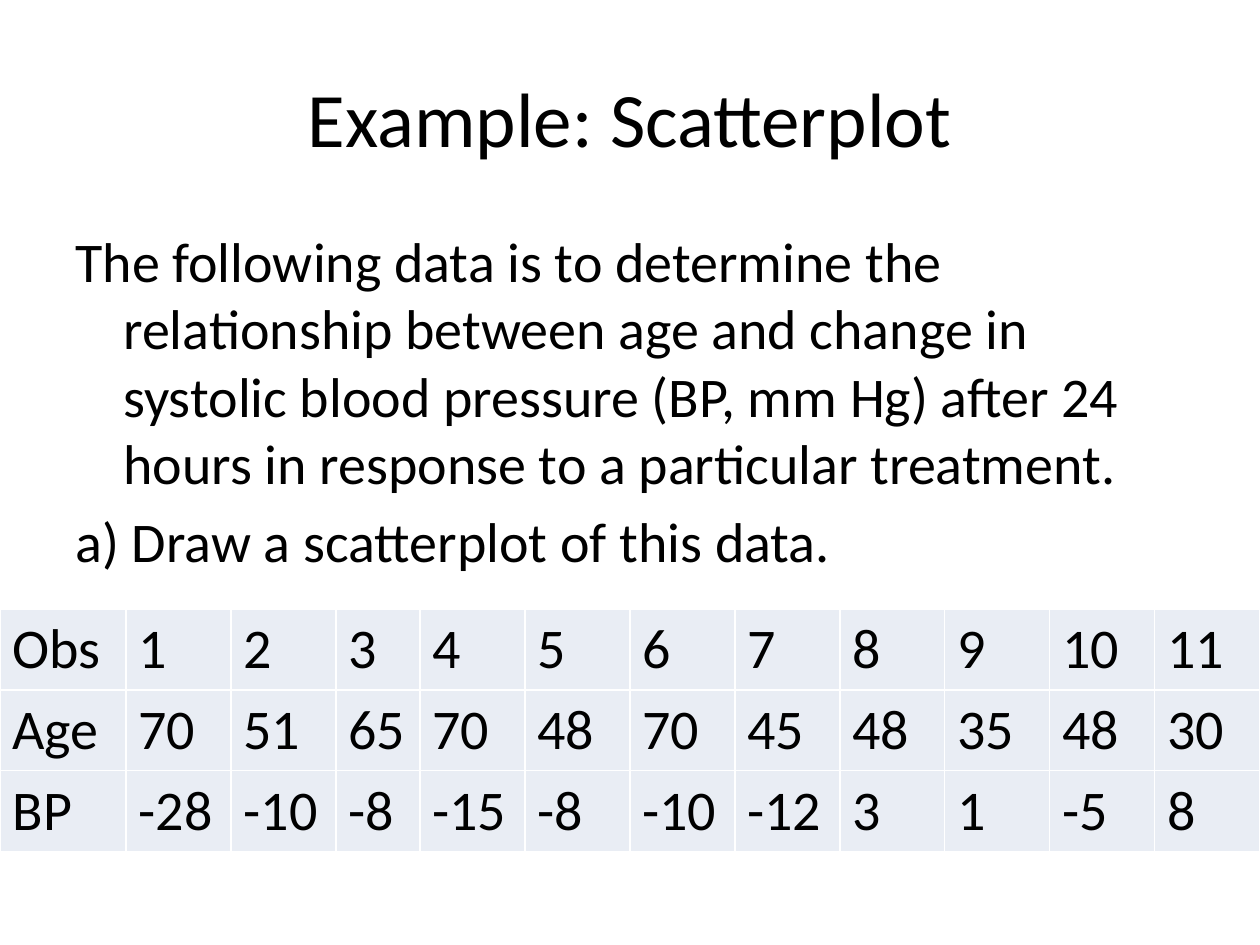
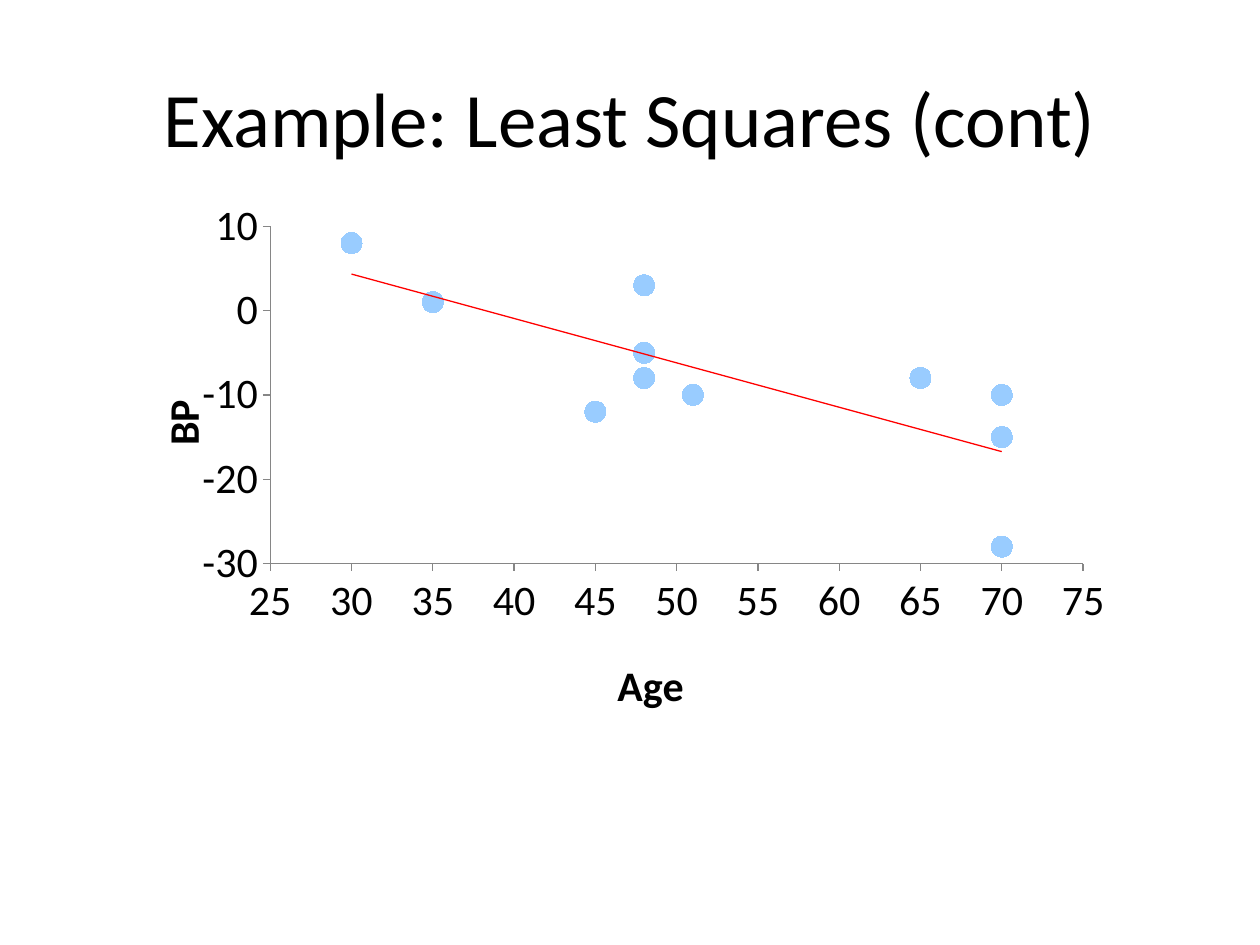
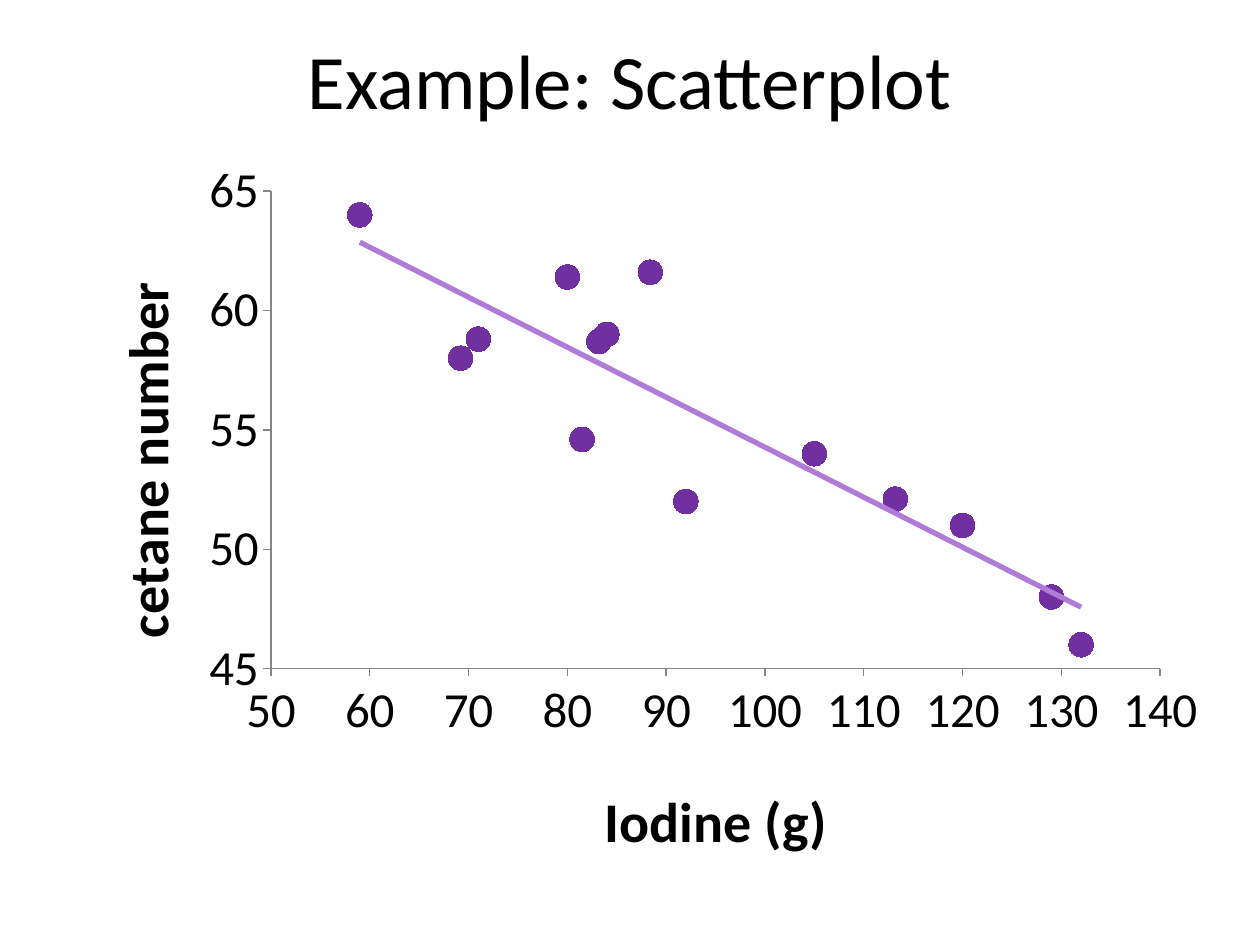
from lxml import etree
from pptx import Presentation
from pptx.chart.data import XyChartData
from pptx.dml.color import RGBColor
from pptx.enum.chart import XL_AXIS_CROSSES as Crosses
from pptx.enum.chart import XL_CHART_TYPE as ChartType
from pptx.enum.chart import XL_MARKER_STYLE as Marker
from pptx.enum.chart import XL_TICK_MARK as Tick
from pptx.enum.text import MSO_ANCHOR as Anchor
from pptx.enum.text import PP_ALIGN as Align
from pptx.oxml import parse_xml
from pptx.oxml.ns import nsdecls, qn
from pptx.util import Inches, Pt

WIDTH, HEIGHT = 10, 7.5
COLUMNS = 12
CELL = WIDTH / COLUMNS  # the grid is 12 columns by 9 rows of square cells
TITLE_ONLY = 5

FONT = "Calibri"
BLACK, WHITE = "000000", "FFFFFF"
TABLE_FILL, AXIS_GRAY = "E9EDF4", "868686"
SKY, RED = "99CCFF", "FF0000"
PURPLE, LILAC = "7030A0", "B07BD7"

AGE = [70, 51, 65, 70, 48, 70, 45, 48, 35, 48, 30]
BP = [-28, -10, -8, -15, -8, -10, -12, 3, 1, -5, 8]
IODINE = [132, 129, 120, 113.2, 105, 92, 84, 83.2, 88.4, 59, 80, 81.5, 71, 69.2]
CETANE = [46, 48, 51, 52.1, 54, 52, 59, 58.7, 61.6, 64, 61.4, 54.6, 58.8, 58]


def color(value):
    return RGBColor.from_string(value)


def grid(*cells):
    return [Inches(cell * CELL) for cell in cells]


def set_layout(element, index, shares, inner=False):
    """Place a chart part by x, y and, if given, w, h as shares of the chart."""
    for old in element.findall(qn("c:layout")):
        element.remove(old)
    target = '<c:layoutTarget val="inner"/>' if inner else ""
    modes = '<c:xMode val="edge"/><c:yMode val="edge"/>'
    sizes = "".join(f'<c:{name} val="{share}"/>' for name, share in zip("xywh", shares))
    element.insert(index, parse_xml(
        f'<c:layout {nsdecls("c")}><c:manualLayout>{target}{modes}{sizes}'
        "</c:manualLayout></c:layout>"))


class Deck:
    def __init__(self):
        self.deck = Presentation()
        self.deck.slide_width, self.deck.slide_height = Inches(WIDTH), Inches(HEIGHT)
        self.page = None

    def style(self, font, size, bold=False):
        font.name, font.size, font.bold = FONT, Pt(size), bold
        font.color.rgb = color(BLACK)

    def add_span(self, para, text, size, bold=False):
        span = para.add_run()
        span.text = text
        self.style(span.font, size, bold)

    def add_page(self, title, top=0.36):
        self.page = self.deck.slides.add_slide(self.deck.slide_layouts[TITLE_ONLY])
        box = self.page.shapes.title
        box.left, box.top, box.width, box.height = grid(0.6, top, 10.8, 1.5)
        box.text_frame.vertical_anchor = Anchor.MIDDLE
        para = box.text_frame.paragraphs[0]
        para.alignment = Align.CENTER
        self.add_span(para, title, 44)

    def add_body(self, at, texts, size=32):
        frame = self.page.shapes.add_textbox(*grid(*at)).text_frame
        frame.word_wrap = True
        for index, text in enumerate(texts):
            para = frame.add_paragraph() if index else frame.paragraphs[0]
            para.space_before = Pt(size * 0.2)
            hanging = Inches(0.38)
            properties = para._p.get_or_add_pPr()
            properties.set("marL", str(hanging))
            properties.set("indent", str(-hanging))
            self.add_span(para, text, size)

    def add_table(self, top, widths, row_height, rows):
        at = grid(0, top, COLUMNS, row_height * len(rows))
        table = self.page.shapes.add_table(len(rows), len(widths), *at).table
        table.first_row = table.horz_banding = False
        for column, width in zip(table.columns, grid(*widths)):
            column.width = width
        for row, values in zip(table.rows, rows):
            row.height = grid(row_height)[0]
            for cell, value in zip(row.cells, values):
                self.add_span(cell.text_frame.paragraphs[0], str(value), 32)
                self.add_borders(cell)
                cell.fill.solid()
                cell.fill.fore_color.rgb = color(TABLE_FILL)

    def add_borders(self, cell):
        properties = cell._tc.get_or_add_tcPr()
        for side in ("lnL", "lnR", "lnT", "lnB"):
            line = etree.SubElement(properties, qn(f"a:{side}"), w=str(Pt(1)))
            fill = etree.SubElement(line, qn("a:solidFill"))
            etree.SubElement(fill, qn("a:srgbClr"), val=WHITE)

    def add_scatter(self, at, xs, ys, plot, marker, trend):
        data = XyChartData()
        points = data.add_series("Series 1")
        for x, y in zip(xs, ys):
            points.add_data_point(x, y)
        chart = self.page.shapes.add_chart(ChartType.XY_SCATTER, *grid(*at), data).chart
        chart.has_title = chart.has_legend = False
        self.style(chart.font, 10)
        chart.plots[0].vary_by_categories = False
        set_layout(chart._chartSpace.chart.plotArea, 0, plot, inner=True)

        series = chart.plots[0].series[0]
        series.format.line.fill.background()
        size, fill = marker
        series.marker.style, series.marker.size = Marker.CIRCLE, size
        series.marker.format.fill.solid()
        series.marker.format.fill.fore_color.rgb = color(fill)
        series.marker.format.line.fill.background()
        self.add_trend(series, *trend)
        return chart

    def add_trend(self, series, stroke, width):
        series._element.find(qn("c:xVal")).addprevious(parse_xml(
            f'<c:trendline {nsdecls("c", "a")}><c:spPr><a:ln w="{Pt(width)}">'
            f'<a:solidFill><a:srgbClr val="{stroke}"/></a:solidFill></a:ln></c:spPr>'
            '<c:trendlineType val="linear"/><c:dispRSqr val="0"/><c:dispEq val="0"/>'
            "</c:trendline>"))

    def format_axis(self, axis, title, title_at, sizes, scale, upright=False):
        title_size, tick_size = sizes
        axis.minimum_scale, axis.maximum_scale, axis.major_unit = scale
        axis.has_major_gridlines = False
        axis.crosses = Crosses.MINIMUM
        axis.major_tick_mark, axis.minor_tick_mark = Tick.OUTSIDE, Tick.NONE
        axis.format.line.color.rgb = color(AXIS_GRAY)
        axis.format.line.width = Pt(0.75)
        labels = axis.tick_labels
        labels.number_format, labels.number_format_is_linked = "General", False
        self.style(labels.font, tick_size)

        frame = axis.axis_title.text_frame
        self.add_span(frame.paragraphs[0], title, title_size, bold=True)
        if upright:
            turn = frame._element.find(qn("a:bodyPr"))
            turn.set("rot", "-5400000")
            turn.set("vert", "horz")
        set_layout(axis.axis_title._element, 1, title_at)


def main():
    deck = Deck()

    deck.add_page("Example: Scatterplot")
    deck.add_body((0.6, 2.1, 10.8, 5.94), [
        "The following data is to determine the relationship between age and change in "
        "systolic blood pressure (BP, mm Hg) after 24 hours in response to a particular "
        "treatment.",
        "a) Draw a scatterplot of this data."])
    widths = [1.2, 1, 1, 0.8] + [1] * 8
    deck.add_table(5.8, widths, 0.77, [
        ["Obs", *range(1, len(AGE) + 1)], ["Age", *AGE], ["BP", *BP]])

    deck.add_page("Example: Least Squares (cont)")
    chart = deck.add_scatter((1.3, 1.9, 9.8, 5.1), AGE, BP, (0.13, 0.05, 0.79, 0.63),
                             marker=(12, SKY), trend=(RED, 0.75))
    sizes = 24, 24
    deck.format_axis(chart.category_axis, "Age", (0.46, 0.84), sizes, (25, 75, 5))
    deck.format_axis(chart.value_axis, "BP", (0.01, 0.36), sizes, (-30, 10, 10), upright=True)

    deck.add_page("Example: Scatterplot", top=0)
    chart = deck.add_scatter((0.6, 1.4, 11, 7), IODINE, CETANE, (0.18, 0.06, 0.77, 0.65),
                             marker=(14, PURPLE), trend=(LILAC, 3))
    sizes = 32, 28
    deck.format_axis(chart.category_axis, "Iodine (g)", (0.46, 0.85), sizes, (50, 140, 10))
    deck.format_axis(chart.value_axis, "cetane number", (0.03, 0.17), sizes, (45, 65, 5),
                     upright=True)

    deck.deck.save("out.pptx")


if __name__ == "__main__":
    main()
